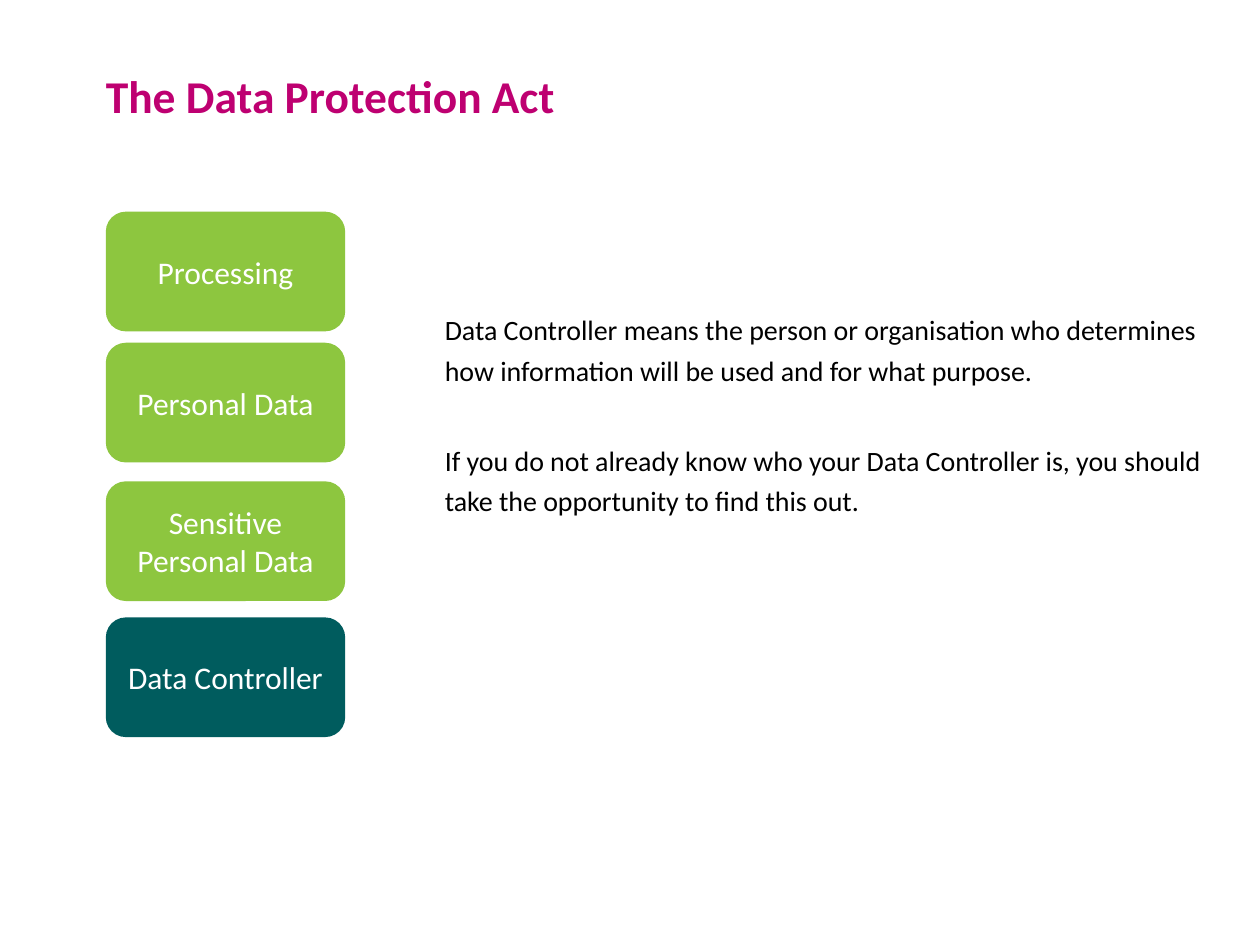
from pptx import Presentation
from pptx.dml.color import RGBColor
from pptx.enum.shapes import MSO_SHAPE
from pptx.enum.text import MSO_ANCHOR, PP_ALIGN
from pptx.util import Inches, Pt

TITLE = "The Data Protection Act"
TOPICS = [
    ("Processing", 1.68),
    ("Personal Data", 2.72),
    ("Sensitive Personal Data", 3.82),
    ("Data Controller", 4.9),
]
CURRENT_TOPIC = "Data Controller"
EXPLANATION = [
    "Data Controller means the person or organisation who determines "
    "how information will be used and for what purpose.",
    "If you do not already know who your Data Controller is, you should "
    "take the opportunity to find this out.",
]
THEME = {
    "font": "Calibri",
    "title": ("BE0071", 26),
    "topic": ("FFFFFF", 18),
    "body": ("000000", 16),
    "topic_fill": "8DC63F",
    "current_fill": "005C5E",
}
LEFT = 0.84
TOPIC_WIDTH, TOPIC_HEIGHT = 1.9, 0.95


def style(paragraph, role, bold=False):
    color, size = THEME[role]
    for run in paragraph.runs:
        run.font.name = THEME["font"]
        run.font.size = Pt(size)
        run.font.bold = bold
        run.font.color.rgb = RGBColor.from_string(color)


def add_text(slide, text, left, top, width, height, role, bold=False):
    shape = slide.shapes.add_textbox(
        Inches(left), Inches(top), Inches(width), Inches(height))
    frame = shape.text_frame
    frame.word_wrap = True
    frame.margin_left = frame.margin_right = 0
    frame.margin_top = frame.margin_bottom = 0
    frame.text = text
    for paragraph in frame.paragraphs:
        style(paragraph, role, bold)
    return frame


def add_topic(slide, label, top):
    shape = slide.shapes.add_shape(
        MSO_SHAPE.ROUNDED_RECTANGLE,
        Inches(LEFT), Inches(top), Inches(TOPIC_WIDTH), Inches(TOPIC_HEIGHT))
    shape.shadow.inherit = False
    fill = THEME["current_fill" if label == CURRENT_TOPIC else "topic_fill"]
    shape.fill.solid()
    shape.fill.fore_color.rgb = RGBColor.from_string(fill)
    shape.line.fill.background()
    frame = shape.text_frame
    frame.word_wrap = True
    frame.vertical_anchor = MSO_ANCHOR.MIDDLE
    frame.text = label
    paragraph = frame.paragraphs[0]
    paragraph.alignment = PP_ALIGN.CENTER
    style(paragraph, "topic")


def main():
    presentation = Presentation()
    presentation.slide_width = Inches(10)
    presentation.slide_height = Inches(7.5)
    slide = presentation.slides.add_slide(presentation.slide_layouts[6])

    add_text(slide, TITLE, LEFT, 0.54, 5.34, 0.4, "title", bold=True)
    for label, top in TOPICS:
        add_topic(slide, label, top)

    body = add_text(slide, "\n".join(EXPLANATION), 3.53, 2.43, 6.01, 2.34, "body")
    for index, paragraph in enumerate(body.paragraphs):
        paragraph.line_spacing = 1.2
        paragraph.space_before = Pt(28.5 if index else 0)

    presentation.save("out.pptx")


if __name__ == "__main__":
    main()
